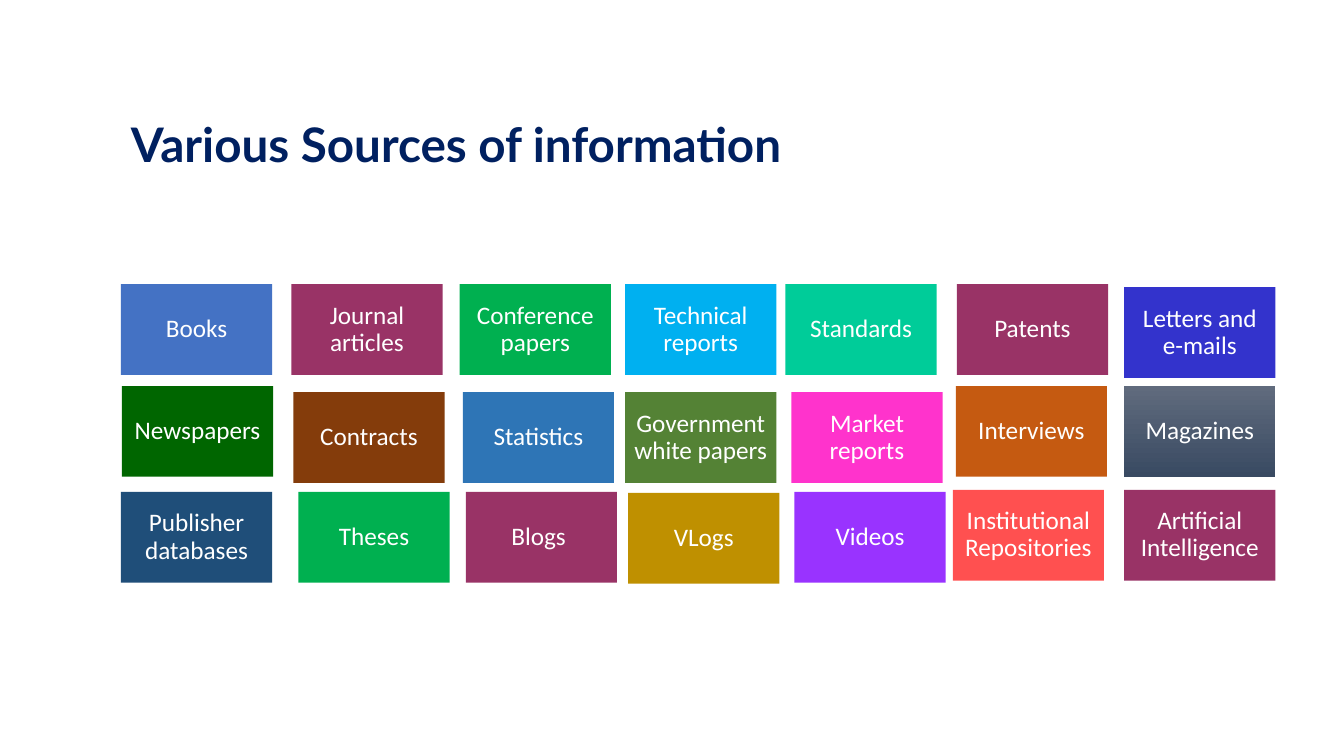
from dataclasses import dataclass

from pptx import Presentation
from pptx.dml.color import RGBColor
from pptx.enum import shapes, text
from pptx.util import Emu, Pt

EMU_PER_PX = 9144
TILE_WIDTH, TILE_HEIGHT, TILE_INSET = 150, 90, 7

WHITE = RGBColor(0xFF, 0xFF, 0xFF)
NAVY = RGBColor(0x00, 0x20, 0x60)
BLUE = RGBColor(0x44, 0x72, 0xC4)
PLUM = RGBColor(0x99, 0x33, 0x66)
GREEN = RGBColor(0x00, 0xB0, 0x50)
SKY = RGBColor(0x00, 0xB0, 0xF0)
TEAL = RGBColor(0x00, 0xCC, 0x99)
INDIGO = RGBColor(0x33, 0x33, 0xCC)
FOREST = RGBColor(0x00, 0x66, 0x00)
BROWN = RGBColor(0x84, 0x3C, 0x0B)
STEEL = RGBColor(0x2E, 0x75, 0xB6)
OLIVE = RGBColor(0x54, 0x82, 0x35)
PINK = RGBColor(0xFF, 0x33, 0xCC)
ORANGE = RGBColor(0xC5, 0x5A, 0x11)
SLATE_LIGHT = RGBColor(0x60, 0x6B, 0x7D)
SLATE_DARK = RGBColor(0x39, 0x4A, 0x62)
DEEP_BLUE = RGBColor(0x1F, 0x4E, 0x79)
GOLD = RGBColor(0xBF, 0x90, 0x00)
VIOLET = RGBColor(0x99, 0x33, 0xFF)
CORAL = RGBColor(0xFF, 0x50, 0x50)


@dataclass(frozen=True)
class Tile:
    """A coloured source of information."""

    label: str
    left: int
    top: int
    colour: RGBColor
    gradient_end: RGBColor | None = None


TILES = (
    Tile("Books", 120, 282, BLUE),
    Tile("Journal articles", 289, 282, PLUM),
    Tile("Conference papers", 456, 282, GREEN),
    Tile("Technical reports", 620, 282, SKY),
    Tile("Standards", 779, 282, TEAL),
    Tile("Patents", 949, 282, PLUM),
    Tile("Letters and e-mails", 1115, 285, INDIGO),
    Tile("Newspapers", 121, 383, FOREST),
    Tile("Contracts", 291, 389, BROWN),
    Tile("Statistics", 459, 389, STEEL),
    Tile("Government white papers", 620, 389, OLIVE),
    Tile("Market reports", 785, 389, PINK),
    Tile("Interviews", 948, 383, ORANGE),
    Tile("Magazines", 1115, 383, SLATE_LIGHT, SLATE_DARK),
    Tile("Publisher databases", 120, 488, DEEP_BLUE),
    Tile("Theses", 296, 488, GREEN),
    Tile("Blogs ", 462, 488, PLUM),
    Tile("VLogs", 623, 489, GOLD),
    Tile("Videos", 788, 488, VIOLET),
    Tile("Institutional Repositories", 945, 486, CORAL),
    Tile("Artificial Intelligence", 1115, 486, PLUM),
)


def px(length: int) -> Emu:
    """Turn px into EMU."""
    return Emu(length * EMU_PER_PX)


def write(box, wording: str, *, font: str, size: int, colour: RGBColor,
          bold: bool = False, align=text.PP_ALIGN.LEFT) -> None:
    """Write one vertically centred paragraph into a box."""
    frame = box.text_frame
    frame.word_wrap = True
    frame.vertical_anchor = text.MSO_ANCHOR.MIDDLE
    para = frame.paragraphs[0]
    para.alignment = align
    para.line_spacing = 0.9
    span = para.add_run()
    span.text = wording
    span.font.name = font
    span.font.size = Pt(size)
    span.font.bold = bold
    span.font.color.rgb = colour


def draw_tile(page, tile: Tile) -> None:
    """Draw one labelled rectangle."""
    box = page.shapes.add_shape(
        shapes.MSO_SHAPE.RECTANGLE,
        px(tile.left), px(tile.top), px(TILE_WIDTH), px(TILE_HEIGHT))
    box.shadow.inherit = False
    box.line.fill.background()
    if tile.gradient_end is None:
        box.fill.solid()
        box.fill.fore_color.rgb = tile.colour
    else:
        box.fill.gradient()
        box.fill.gradient_angle = 270
        for stop, colour in zip(box.fill.gradient_stops, (tile.colour, tile.gradient_end)):
            stop.color.rgb = colour
    frame = box.text_frame
    frame.margin_left = frame.margin_right = px(TILE_INSET)
    frame.margin_top = frame.margin_bottom = px(TILE_INSET)
    write(box, tile.label, font="Calibri", size=18, colour=WHITE,
          align=text.PP_ALIGN.CENTER)


def main() -> None:
    """Build and save the slide."""
    deck = Presentation()
    deck.slide_width, deck.slide_height = px(1333), px(750)
    page = deck.slides.add_slide(deck.slide_layouts[6])
    title = page.shapes.add_textbox(px(120), px(88), px(1132), px(115))
    write(title, "Various Sources of information", font="Lato", size=34,
          colour=NAVY, bold=True)
    for tile in TILES:
        draw_tile(page, tile)
    deck.save("out.pptx")


if __name__ == "__main__":
    main()
